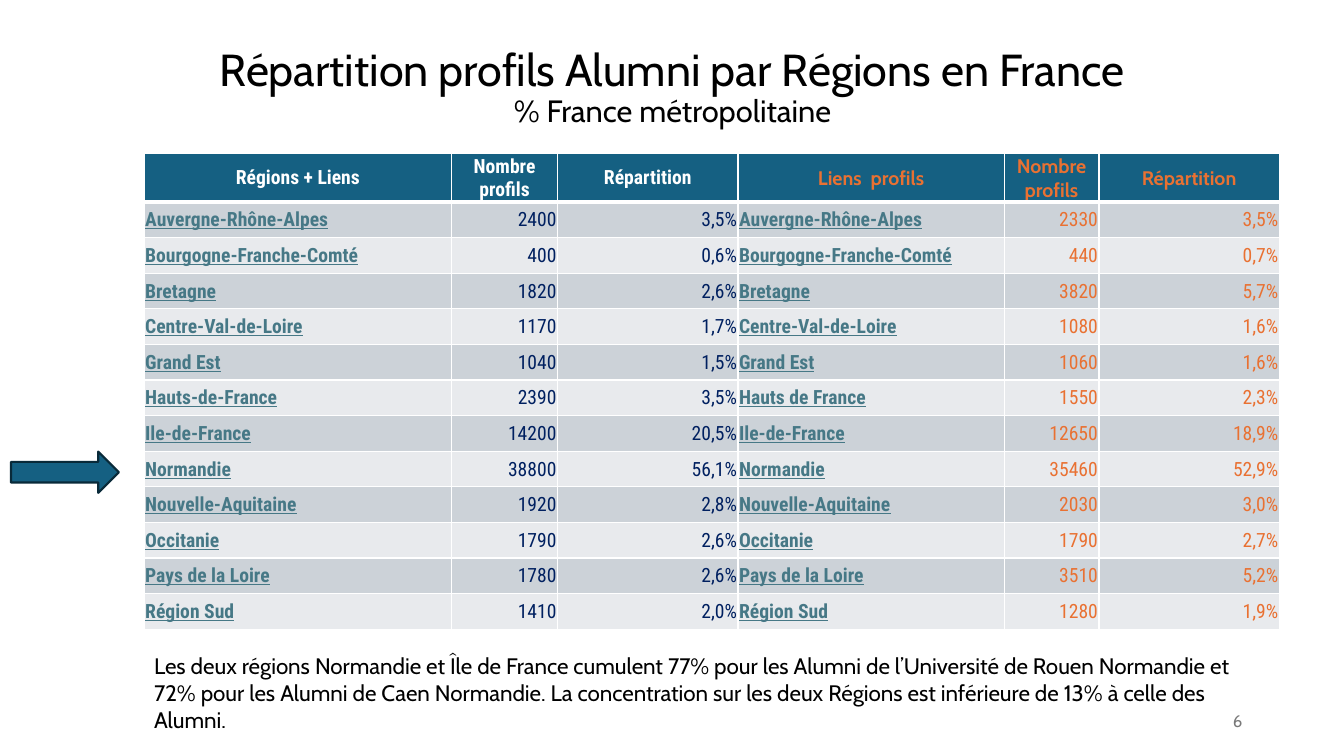
from lxml import etree
from pptx import Presentation
from pptx.dml.color import RGBColor
from pptx.enum.shapes import MSO_SHAPE
from pptx.enum.text import MSO_ANCHOR, MSO_AUTO_SIZE, PP_ALIGN
from pptx.oxml.ns import qn
from pptx.util import Inches, Pt

LEFT, CENTER, RIGHT = PP_ALIGN.LEFT, PP_ALIGN.CENTER, PP_ALIGN.RIGHT
MIDDLE = MSO_ANCHOR.MIDDLE
RIGHT_ARROW = MSO_SHAPE.RIGHT_ARROW

BLACK = RGBColor(0x00, 0x00, 0x00)
WHITE = RGBColor(0xFF, 0xFF, 0xFF)
TEAL = RGBColor(0x15, 0x60, 0x82)
DARK_TEAL = RGBColor(0x09, 0x2A, 0x39)
LINK = RGBColor(0x46, 0x78, 0x86)
NAVY = RGBColor(0x00, 0x20, 0x60)
ORANGE = RGBColor(0xE9, 0x71, 0x32)
GREY = RGBColor(0x79, 0x79, 0x79)
BANDS = (RGBColor(0xCC, 0xD2, 0xD8), RGBColor(0xE8, 0xEA, 0xED))
CABIN, ROBOTO = "Cabin", "Roboto Condensed"

HEADERS = ("Régions + Liens", "Nombre\nprofils", "Répartition",
           "Liens  profils", "Nombre profils", "Répartition")
ROWS = (
    ("Auvergne-Rhône-Alpes", "2400", "3,5%", "Auvergne-Rhône-Alpes", "2330", "3,5%"),
    ("Bourgogne-Franche-Comté", "400", "0,6%", "Bourgogne-Franche-Comté", "440", "0,7%"),
    ("Bretagne", "1820", "2,6%", "Bretagne", "3820", "5,7%"),
    ("Centre-Val-de-Loire", "1170", "1,7%", "Centre-Val-de-Loire", "1080", "1,6%"),
    ("Grand Est", "1040", "1,5%", "Grand Est", "1060", "1,6%"),
    ("Hauts-de-France", "2390", "3,5%", "Hauts de France", "1550", "2,3%"),
    ("Ile-de-France", "14200", "20,5%", "Ile-de-France", "12650", "18,9%"),
    ("Normandie", "38800", "56,1%", "Normandie", "35460", "52,9%"),
    ("Nouvelle-Aquitaine", "1920", "2,8%", "Nouvelle-Aquitaine", "2030", "3,0%"),
    ("Occitanie", "1790", "2,6%", "Occitanie", "1790", "2,7%"),
    ("Pays de la Loire", "1780", "2,6%", "Pays de la Loire", "3510", "5,2%"),
    ("Région Sud", "1410", "2,0%", "Région Sud", "1280", "1,9%"),
)
COL_WIDTHS = (3.05, 1.05, 1.79, 2.64, 0.94, 1.79)
TABLE_LEFT, TABLE_TOP, TABLE_HEIGHT, HEADER_HEIGHT = 1.43, 1.52, 4.72, 0.48
ROW_HEIGHT = (TABLE_HEIGHT - HEADER_HEIGHT) / len(ROWS)


def style_font(run, color, **formats):
    run.font.color.rgb = color
    for name, value in formats.items():
        setattr(run.font, name, value)


def set_borders(cell, header):
    """White 1 pt cell borders, with a 3 pt rule between header and body."""
    tcPr = cell._tc.get_or_add_tcPr()
    for side in "LRTB":
        width = 3 if header and side == "B" else 1
        ln = etree.SubElement(tcPr, qn(f"a:ln{side}"), w=str(Pt(width)))
        fill = etree.SubElement(ln, qn("a:solidFill"))
        etree.SubElement(fill, qn("a:srgbClr"), val=str(WHITE))


prs = Presentation()
prs.slide_width, prs.slide_height = Inches(13.33), Inches(7.5)
s = prs.slides.add_slide(prs.slide_layouts[5])

# Title
title = s.shapes.title
title.left, title.top = Inches(0.92), Inches(0.4)
title.width, title.height = Inches(11.5), Inches(0.95)
tf = title.text_frame
tf.auto_size = MSO_AUTO_SIZE.NONE
tf.vertical_anchor = MIDDLE
p = tf.paragraphs[0]
p.alignment, p.line_spacing = CENTER, 0.9
r = p.add_run()
r.text = "Répartition profils Alumni par Régions en France"
style_font(r, BLACK, name=CABIN, size=Pt(32))
p.add_line_break()
r = p.add_run()
r.text = "% France métropolitaine"
style_font(r, BLACK, name=CABIN, size=Pt(22))

# Table of regions: three columns per university
table = s.shapes.add_table(
    len(ROWS) + 1, len(COL_WIDTHS), Inches(TABLE_LEFT), Inches(TABLE_TOP),
    Inches(sum(COL_WIDTHS)), Inches(TABLE_HEIGHT)).table
for col, width in zip(table.columns, COL_WIDTHS):
    col.width = Inches(width)
for i, values in enumerate((HEADERS, *ROWS)):
    header = i == 0
    table.rows[i].height = Inches(HEADER_HEIGHT if header else ROW_HEIGHT)
    for j, value in enumerate(values):
        second, region = j >= 3, j % 3 == 0
        if header:
            align, color = CENTER, ORANGE if second else WHITE
        elif region:
            align, color = LEFT, LINK
        else:
            align, color = RIGHT, ORANGE if second else NAVY
        cell = table.cell(i, j)
        set_borders(cell, header)
        cell.fill.solid()
        cell.fill.fore_color.rgb = TEAL if header else BANDS[(i - 1) % 2]
        cell.vertical_anchor = MIDDLE
        cell.margin_left = cell.margin_right = cell.margin_top = Inches(0.01)
        cell.margin_bottom = 0
        cell.text = value
        for p in cell.text_frame.paragraphs:
            p.alignment = align
            style_font(p.runs[0], color, size=Pt(14),
                       name=CABIN if header and second else ROBOTO,
                       bold=header or region, underline=region and not header)

# Arrow pointing at Normandie
arrow = s.shapes.add_shape(RIGHT_ARROW, Inches(0.11), Inches(4.48),
                           Inches(1.07), Inches(0.41))
arrow.shadow.inherit = False
arrow.fill.solid()
arrow.fill.fore_color.rgb = TEAL
arrow.line.color.rgb = DARK_TEAL
arrow.line.width = Pt(1.5)

# Slide number and comment
COMMENT = ("Les deux régions Normandie et Île de France cumulent 77% pour les Alumni "
           "de l’Université de Rouen Normandie et 72% pour les Alumni de Caen Normandie. "
           "La concentration sur les deux Régions est inférieure de 13% à celle des Alumni.")
for text, box, anchor, align, size, color in (
        ("6", (9.42, 6.95, 3, 0.4), MIDDLE, RIGHT, 12, GREY),
        (COMMENT, (TABLE_LEFT, 6.42, 11.07, 0.91), MSO_ANCHOR.TOP, LEFT, 16, BLACK)):
    tf = s.shapes.add_textbox(*map(Inches, box)).text_frame
    tf.word_wrap = True
    tf.vertical_anchor = anchor
    p = tf.paragraphs[0]
    p.alignment = align
    r = p.add_run()
    r.text = text
    style_font(r, color, name=CABIN, size=Pt(size))

prs.save("out.pptx")
